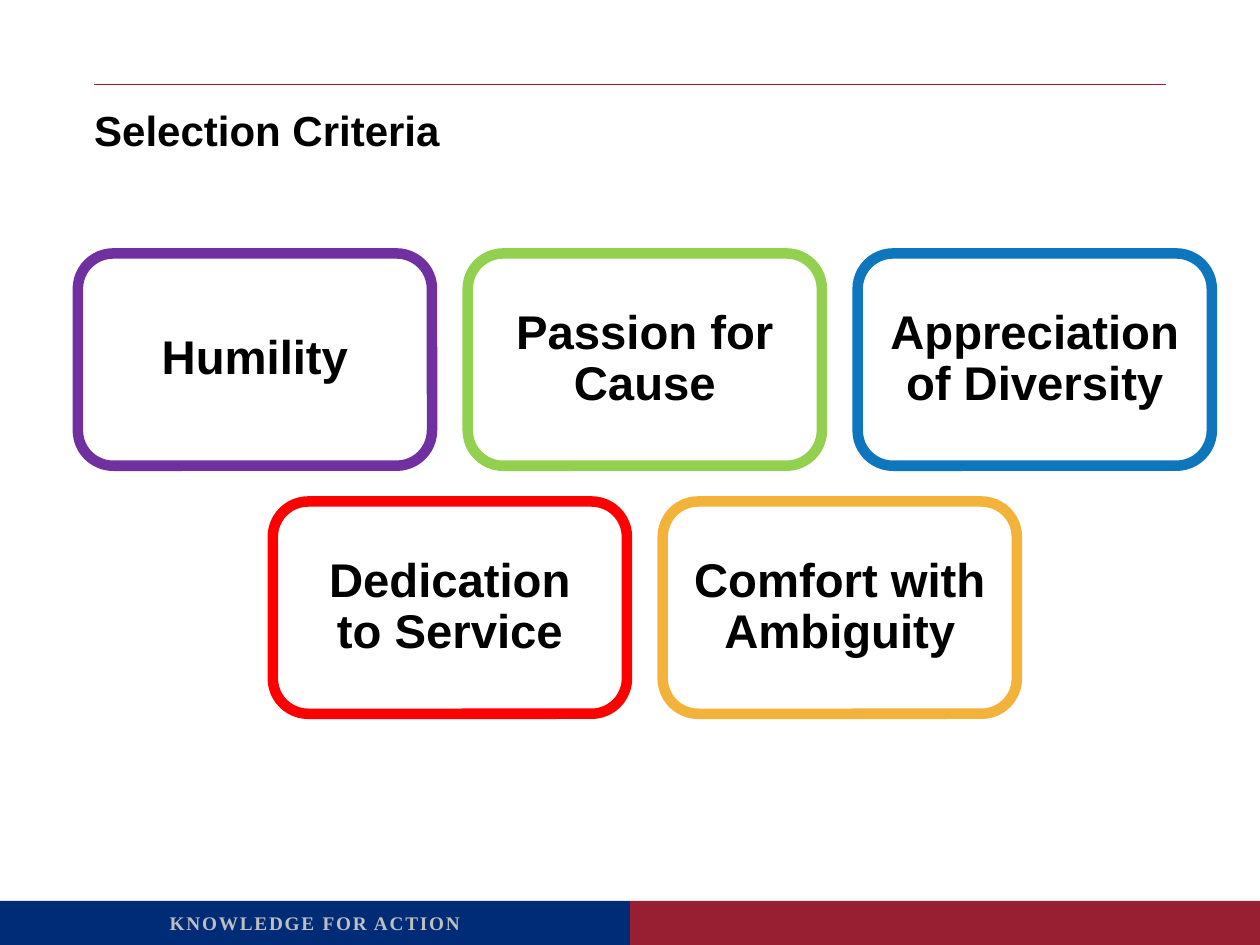
from pptx import Presentation, util as u
from pptx.dml.color import RGBColor
from pptx.enum import shapes, text
from pptx.oxml.ns import qn
from lxml import etree

COLOURS = {
    "navy": "002C77", "crimson": "981E32", "grey": "BFBFBF", "black": "000000",
    "purple": "7030A0", "green": "92D050", "blue": "0E76BC",
    "red": "FF0000", "amber": "F3B23A",
}
CRITERIA_ROWS = [
    [("Humility", "purple"), ("Passion for Cause", "green"),
     ("Appreciation of Diversity", "blue")],
    [("Dedication to Service", "red"), ("Comfort with Ambiguity", "amber")],
]
CARD_WIDTH, CARD_HEIGHT, GAP = 7.14, 4.28, 0.72
CARDS_LEFT, CARDS_TOP = 1.57, 5.11


def colour(name):
    return RGBColor.from_string(COLOURS[name])


class SlideBuilder:
    """Draws styled elements on one slide; all lengths are in centimetres."""

    def __init__(self, slide):
        self.shapes = slide.shapes

    def set_text(self, box, words, size, font="Arial", ink="black", margin=0.0,
                 centred=False, tracking=None):
        """Fill a box with one bold paragraph; tracking is in points."""
        frame = box.text_frame
        frame.word_wrap = True
        frame.margin_left = frame.margin_right = u.Cm(margin)
        frame.margin_top = frame.margin_bottom = u.Cm(margin)
        para = frame.paragraphs[0]
        para.alignment = text.PP_ALIGN.CENTER if centred else text.PP_ALIGN.LEFT
        span = para.add_run()
        span.text = words
        if tracking:
            span._r.get_or_add_rPr().set("spc", str(int(tracking * 100)))
        para.font.name = font
        para.font.size = u.Pt(size)
        para.font.bold = True
        para.font.color.rgb = colour(ink)
        return para

    def label(self, left, top, width, height, words, size, **style):
        box = self.shapes.add_textbox(*map(u.Cm, (left, top, width, height)))
        self.set_text(box, words, size, **style)

    def band(self, left, top, width, height, fill):
        band = self.shapes.add_shape(shapes.MSO_SHAPE.RECTANGLE,
                                     *map(u.Cm, (left, top, width, height)))
        band.shadow.inherit = False
        band.fill.solid()
        band.fill.fore_color.rgb = colour(fill)
        band.line.fill.background()

    def rule(self, left, right, top, ink):
        rule = self.shapes.add_connector(shapes.MSO_CONNECTOR.STRAIGHT,
                                         *map(u.Cm, (left, top, right, top)))
        rule.line.color.rgb = colour(ink)
        rule.line.width = u.Pt(0.5)
        etree.SubElement(rule._element.spPr, qn("a:effectLst"))

    def card(self, left, top, words, outline):
        card = self.shapes.add_shape(shapes.MSO_SHAPE.ROUNDED_RECTANGLE,
                                     *map(u.Cm, (left, top, CARD_WIDTH, CARD_HEIGHT)))
        card.shadow.inherit = False
        card.fill.background()
        card.line.color.rgb = colour(outline)
        card.line.width = u.Pt(6)
        card.text_frame.vertical_anchor = text.MSO_ANCHOR.MIDDLE
        para = self.set_text(card, words, 27, margin=0.36, centred=True)
        para.line_spacing = 0.9


def main():
    deck = Presentation()
    deck.slide_width, deck.slide_height = u.Cm(25.4), u.Cm(19.05)
    page = SlideBuilder(deck.slides.add_slide(deck.slide_layouts[6]))

    page.band(12.7, 18.16, 12.7, 0.89, "crimson")
    page.band(0, 18.16, 12.7, 0.89, "navy")
    page.label(0, 18.24, 12.7, 0.73, "KNOWLEDGE FOR ACTION", 11, margin=0.13,
               font="Times New Roman", ink="grey", centred=True, tracking=1)
    page.rule(1.9, 23.5, 1.7, "crimson")
    page.label(1.9, 2.1, 21.6, 2.1, "Selection Criteria", 24)

    pitch = CARD_WIDTH + GAP
    for row, criteria in enumerate(CRITERIA_ROWS):
        indent = (len(CRITERIA_ROWS[0]) - len(criteria)) * pitch / 2
        top = CARDS_TOP + row * (CARD_HEIGHT + GAP)
        for column, (words, outline) in enumerate(criteria):
            page.card(CARDS_LEFT + indent + column * pitch, top, words, outline)

    deck.save("out.pptx")


if __name__ == "__main__":
    main()
